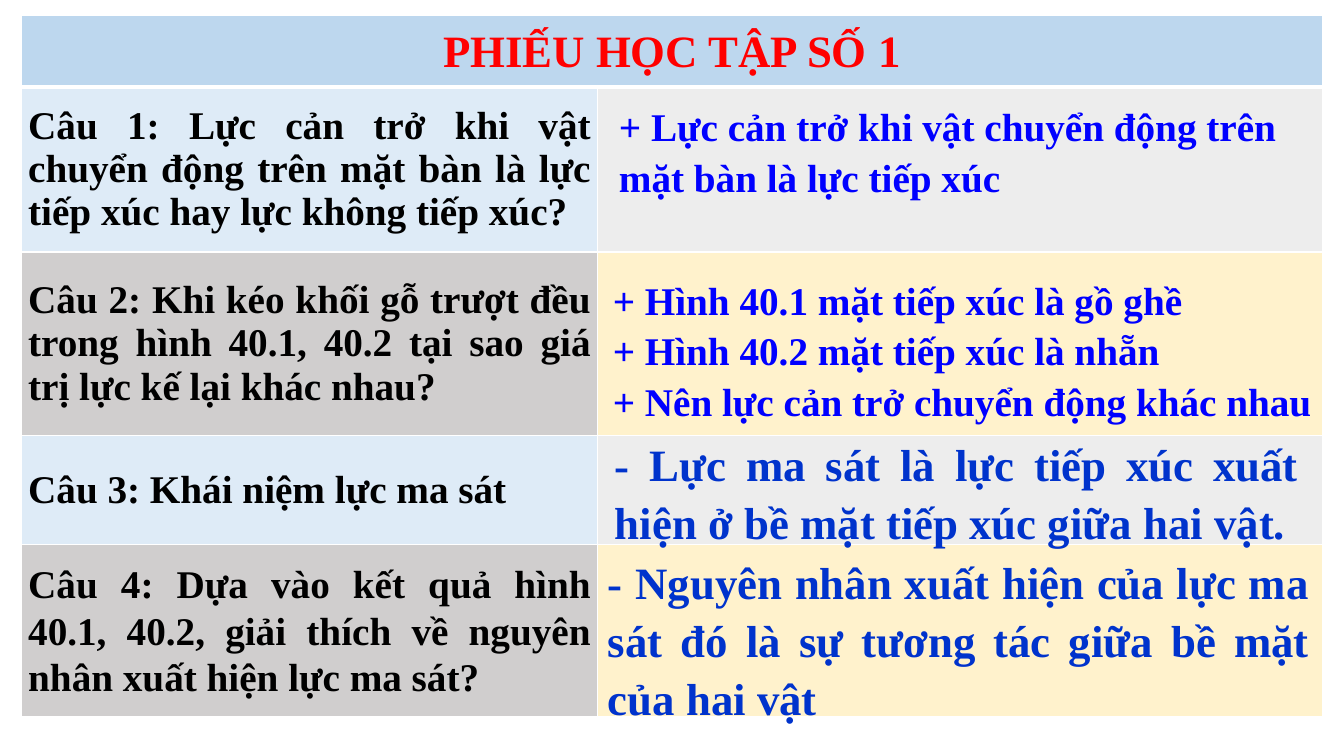
from dataclasses import dataclass

from pptx import Presentation
from pptx import util as u
from pptx.dml.color import RGBColor
from pptx.enum import text
from pptx.oxml import parse_xml
from pptx.oxml.ns import nsdecls

PX = 9144  # EMU per px, 100 px to the inch


@dataclass(frozen=True)
class Theme:
    font: str = "Times New Roman"
    large: int = 32
    normal: int = 28
    title: str = "FF0000"
    question: str = "000000"
    answer: str = "0000FF"
    conclusion: str = "0033CC"
    header: str = "BDD7EE"
    bands: tuple = (("DEEBF7", "EDEDED"), ("D0CECE", "FFF2CC"))
    border: str = "FFFFFF"


THEME = Theme()
CENTER, JUSTIFY, LEFT = (
    text.PP_ALIGN.CENTER, text.PP_ALIGN.JUSTIFY, text.PP_ALIGN.LEFT)

TITLE = "PHIẾU HỌC TẬP SỐ 1"
COLUMNS = (572, 719)
ROWS = (71, 164, 182, 108, 171)
# Question and its line spacing
QUESTIONS = (
    ("Câu 1: Lực cản trở khi vật chuyển động trên mặt bàn là lực tiếp xúc "
     "hay lực không tiếp xúc?", 1.0),
    ("Câu 2: Khi kéo khối gỗ trượt đều trong hình 40.1, 40.2 tại sao giá trị "
     "lực kế lại khác nhau?", 1.0),
    ("Câu 3: Khái niệm lực ma sát", 1.0),
    ("Câu 4: Dựa vào kết quả hình 40.1, 40.2, giải thích về nguyên nhân "
     "xuất hiện lực ma sát?", 1.07),
)
# Box, lines, size, colour, alignment
ANSWERS = (
    ((604, 93, 698, 104),
     ["+ Lực cản trở khi vật chuyển động trên mặt bàn là lực tiếp xúc"],
     THEME.normal, THEME.answer, LEFT),
    ((598, 265, 717, 151),
     ["+ Hình 40.1 mặt tiếp xúc là gồ ghề",
      "+ Hình 40.2 mặt tiếp xúc là nhẵn",
      "+ Nên lực cản trở chuyển động khác nhau"],
     THEME.normal, THEME.answer, LEFT),
    ((600, 424, 698, 118),
     ["- Lực ma sát là lực tiếp xúc xuất hiện ở bề mặt tiếp xúc giữa hai vật."],
     THEME.large, THEME.conclusion, JUSTIFY),
    ((593, 541, 716, 172),
     ["- Nguyên nhân xuất hiện của lực ma sát đó là sự tương tác "
      "giữa bề mặt của hai vật"],
     THEME.large, THEME.conclusion, JUSTIFY),
)


def apply(target, values):
    for name, value in values.items():
        setattr(target, name, value)


def write(frame, lines, size, colour, align, spacing):
    for index, line in enumerate(lines):
        para = frame.add_paragraph() if index else frame.paragraphs[0]
        apply(para, {"alignment": align, "line_spacing": spacing})
        span = para.add_run()
        span.text = line
        apply(span.font, {"name": THEME.font, "size": u.Pt(size), "bold": True})
        span.font.color.rgb = RGBColor.from_string(colour)


def style_cell(cell, fill, bottom=1):
    """Set margins, borders and fill; bottom is the lower border in points."""
    apply(cell, {"margin_left": 7 * PX, "margin_right": 7 * PX,
                 "margin_top": 0, "margin_bottom": 0,
                 "vertical_anchor": text.MSO_ANCHOR.MIDDLE})
    properties = cell._tc.get_or_add_tcPr()
    for side, points in (("L", 1), ("R", 1), ("T", 1), ("B", bottom)):
        properties.append(parse_xml(
            f'<a:ln{side} {nsdecls("a")} w="{u.Pt(points)}"><a:solidFill>'
            f'<a:srgbClr val="{THEME.border}"/></a:solidFill></a:ln{side}>'))
    cell.fill.solid()
    cell.fill.fore_color.rgb = RGBColor.from_string(fill)


def add_worksheet(page, left, top):
    """Place the table of questions, with its heading across both columns."""
    table = page.shapes.add_table(
        len(ROWS), len(COLUMNS), left * PX, top * PX,
        sum(COLUMNS) * PX, sum(ROWS) * PX).table
    for column, width in zip(table.columns, COLUMNS):
        column.width = width * PX
    for row, height in zip(table.rows, ROWS):
        row.height = height * PX

    heading = table.cell(0, 0)
    heading.merge(table.cell(0, 1))
    for cell in table.rows[0].cells:
        style_cell(cell, THEME.header, bottom=3)
    write(heading.text_frame, [TITLE], THEME.large, THEME.title, CENTER, 1.07)

    for index, (question, spacing) in enumerate(QUESTIONS):
        cells = table.rows[index + 1].cells
        for cell, fill in zip(cells, THEME.bands[index % 2]):
            style_cell(cell, fill)
        write(cells[0].text_frame, [question], THEME.normal, THEME.question,
              JUSTIFY, spacing)


def add_answer(page, box, lines, size, colour, align):
    frame = page.shapes.add_textbox(*(length * PX for length in box)).text_frame
    apply(frame, {"word_wrap": True,
                  "auto_size": text.MSO_AUTO_SIZE.SHAPE_TO_FIT_TEXT})
    write(frame, lines, size, colour, align, 1.08)


def main():
    deck = Presentation()
    apply(deck, {"slide_width": 1333 * PX, "slide_height": 750 * PX})
    page = deck.slides.add_slide(deck.slide_layouts[6])
    add_worksheet(page, 21, 15)
    for answer in ANSWERS:
        add_answer(page, *answer)
    deck.save("out.pptx")


if __name__ == "__main__":
    main()
